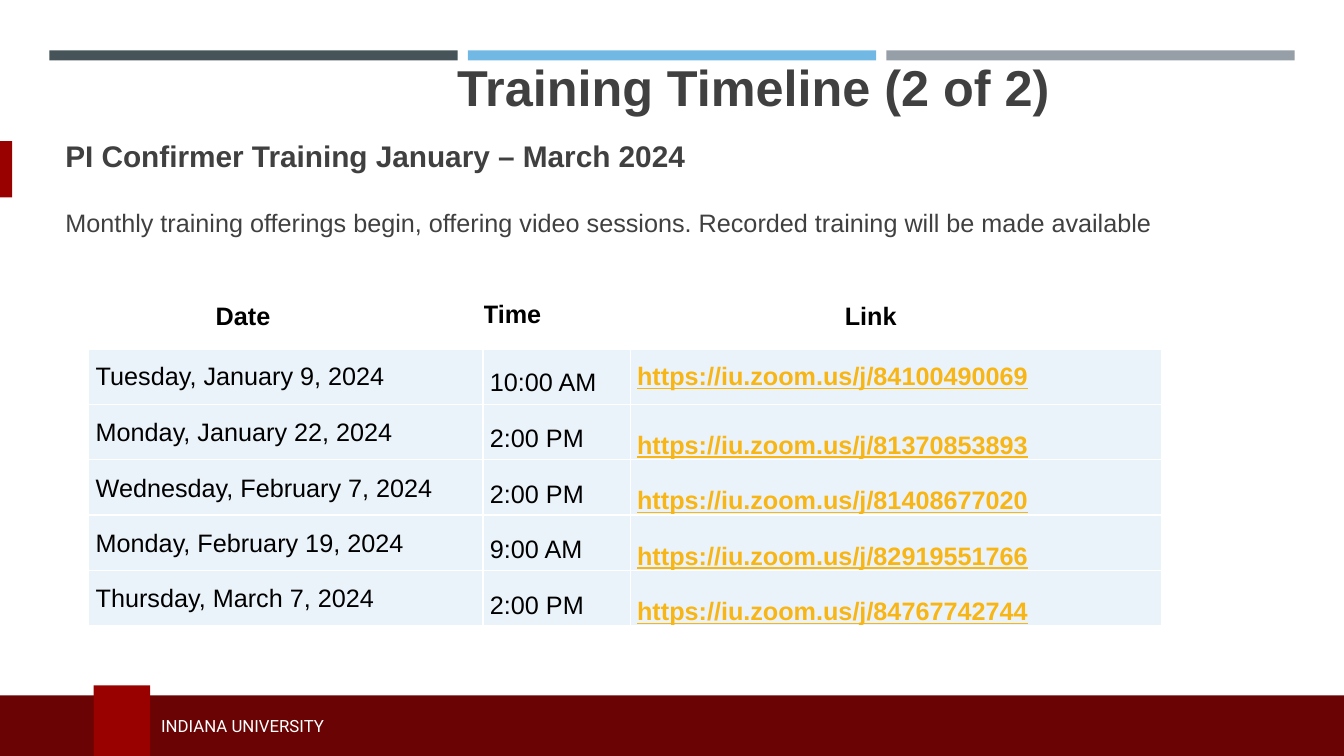
from dataclasses import dataclass

from lxml.etree import SubElement
from pptx import Presentation
from pptx.dml.color import RGBColor
from pptx.enum.shapes import MSO_SHAPE
from pptx.enum.text import MSO_ANCHOR, MSO_AUTO_SIZE, PP_ALIGN
from pptx.oxml.ns import qn
from pptx.util import Inches, Pt


@dataclass(frozen=True)
class Theme:
    font: str = "Arial"
    footer_font: str = "Roboto"
    text: str = "404041"
    black: str = "000000"
    white: str = "FFFFFF"
    link: str = "F7B615"
    cell: str = "EBF3FA"
    slate: str = "465359"
    sky: str = "71B9E4"
    gray: str = "969FA7"
    crimson: str = "990000"
    maroon: str = "690304"
    title_size: float = 36
    heading_size: float = 21.3
    body_size: float = 18
    footer_size: float = 12


THEME = Theme()
HEADERS = [("Date", 1.26), ("Time", 0), ("Link", 2.13)]
SESSIONS = [
    ("Tuesday, January 9, 2024", "10:00 AM", "https://iu.zoom.us/j/84100490069"),
    ("Monday, January 22, 2024", "2:00 PM", "https://iu.zoom.us/j/81370853893"),
    ("Wednesday, February 7, 2024", "2:00 PM", "https://iu.zoom.us/j/81408677020"),
    ("Monday, February 19, 2024", "9:00 AM", "https://iu.zoom.us/j/82919551766"),
    ("Thursday, March 7, 2024", "2:00 PM", "https://iu.zoom.us/j/84767742744"),
]
COLUMN_WIDTHS = [3.91, 1.46, 5.27]
ROW_HEIGHTS = [0.51, 0.56, 0.55, 0.55, 0.55, 0.55]


def style_paragraph(para, size, color, bold=False, font=THEME.font):
    para.font.name = font
    para.font.size = Pt(size)
    para.font.bold = bold
    para.font.color.rgb = RGBColor.from_string(color)


def add_bar(page, left, top, width, height, color):
    bar = page.shapes.add_shape(
        MSO_SHAPE.RECTANGLE, Inches(left), Inches(top), Inches(width), Inches(height)
    )
    bar.shadow.inherit = False
    bar.fill.solid()
    bar.fill.fore_color.rgb = RGBColor.from_string(color)
    bar.line.fill.background()


def add_label(page, text, left, top, width, height, size, color, bold=False, font=THEME.font):
    box = page.shapes.add_textbox(Inches(left), Inches(top), Inches(width), Inches(height))
    frame = box.text_frame
    frame.word_wrap = True
    frame.vertical_anchor = MSO_ANCHOR.MIDDLE
    para = frame.paragraphs[0]
    para.text = text
    style_paragraph(para, size, color, bold, font)


def set_title(page, text):
    title = page.shapes.title
    title.left, title.top = Inches(4.43), Inches(0.59)
    title.width, title.height = Inches(6.09), Inches(0.62)
    frame = title.text_frame
    frame.auto_size = MSO_AUTO_SIZE.NONE
    frame.vertical_anchor = MSO_ANCHOR.BOTTOM
    para = frame.paragraphs[0]
    para.text = text
    para.alignment = PP_ALIGN.CENTER
    style_paragraph(para, THEME.title_size, THEME.text, bold=True)


def set_borders(cell, bottom_width):
    properties = cell._tc.get_or_add_tcPr()
    for position, (side, width) in enumerate(
        [("lnL", 1), ("lnR", 1), ("lnT", 1), ("lnB", bottom_width)]
    ):
        line = SubElement(properties, qn(f"a:{side}"), w=str(Pt(width)))
        fill = SubElement(line, qn("a:solidFill"))
        SubElement(fill, qn("a:srgbClr"), val=THEME.white)
        properties.insert(position, line)


def fill_cell(cell, text, color, bold, spacing, anchor, left=0.07, top=0.0):
    cell.margin_left, cell.margin_top = Inches(left), Inches(top)
    cell.margin_right, cell.margin_bottom = Inches(0.07), Inches(0)
    cell.vertical_anchor = anchor
    para = cell.text_frame.paragraphs[0]
    para.text = text
    para.line_spacing = spacing
    style_paragraph(para, THEME.body_size, color, bold)
    return para


def add_schedule(page):
    table = page.shapes.add_table(
        len(SESSIONS) + 1, len(HEADERS), Inches(0.88), Inches(2.94),
        Inches(sum(COLUMN_WIDTHS)), Inches(sum(ROW_HEIGHTS)),
    ).table
    table.first_row = False
    table.horz_banding = False
    for column, width in zip(table.columns, COLUMN_WIDTHS):
        column.width = Inches(width)
    for row, height in zip(table.rows, ROW_HEIGHTS):
        row.height = Inches(height)

    for index, (text, indent) in enumerate(HEADERS):
        cell = table.cell(0, index)
        spacing = 1.0 if text == "Time" else 1.07
        fill_cell(cell, text, THEME.black, True, spacing, MSO_ANCHOR.TOP, indent, 0.04)
        cell.fill.background()
        set_borders(cell, 3)

    for number, (date, time, link) in enumerate(SESSIONS, start=1):
        date_cell, time_cell, link_cell = table.rows[number].cells
        link_anchor = MSO_ANCHOR.MIDDLE if number == 1 else MSO_ANCHOR.BOTTOM
        fill_cell(date_cell, date, THEME.black, False, 1.07, MSO_ANCHOR.MIDDLE)
        fill_cell(time_cell, time, THEME.black, False, 1.5, MSO_ANCHOR.MIDDLE)
        para = fill_cell(link_cell, link, THEME.link, True, 1.07, link_anchor)
        para.font.underline = True
        for cell in (date_cell, time_cell, link_cell):
            cell.fill.solid()
            cell.fill.fore_color.rgb = RGBColor.from_string(THEME.cell)
            set_borders(cell, 1)


def add_footer(page):
    add_bar(page, -0.04, 6.9, 13.46, 0.66, THEME.maroon)
    add_bar(page, 0.93, 6.8, 0.56, 0.77, THEME.crimson)
    add_label(page, "INDIANA UNIVERSITY", 1.5, 7.05, 5.27, 0.3,
              THEME.footer_size, THEME.white, font=THEME.footer_font)


def main():
    deck = Presentation()
    deck.slide_width, deck.slide_height = Inches(13.33), Inches(7.5)
    page = deck.slides.add_slide(deck.slide_layouts[5])
    for index, color in enumerate((THEME.slate, THEME.sky, THEME.gray)):
        add_bar(page, 0.49 + index * 4.15, 0.5, 4.05, 0.1, color)
    add_bar(page, 0, 1.4, 0.12, 0.56, THEME.crimson)
    add_footer(page)
    set_title(page, "Training Timeline (2 of 2)")
    add_label(page, "PI Confirmer Training January – March 2024",
              0.55, 1.16, 6.44, 0.76, THEME.heading_size, THEME.text, bold=True)
    add_label(
        page,
        "Monthly training offerings begin, offering video sessions. "
        "Recorded training will be made available",
        0.55, 1.9, 11.17, 0.61, THEME.body_size, THEME.text,
    )
    add_schedule(page)
    deck.save("out.pptx")


if __name__ == "__main__":
    main()
